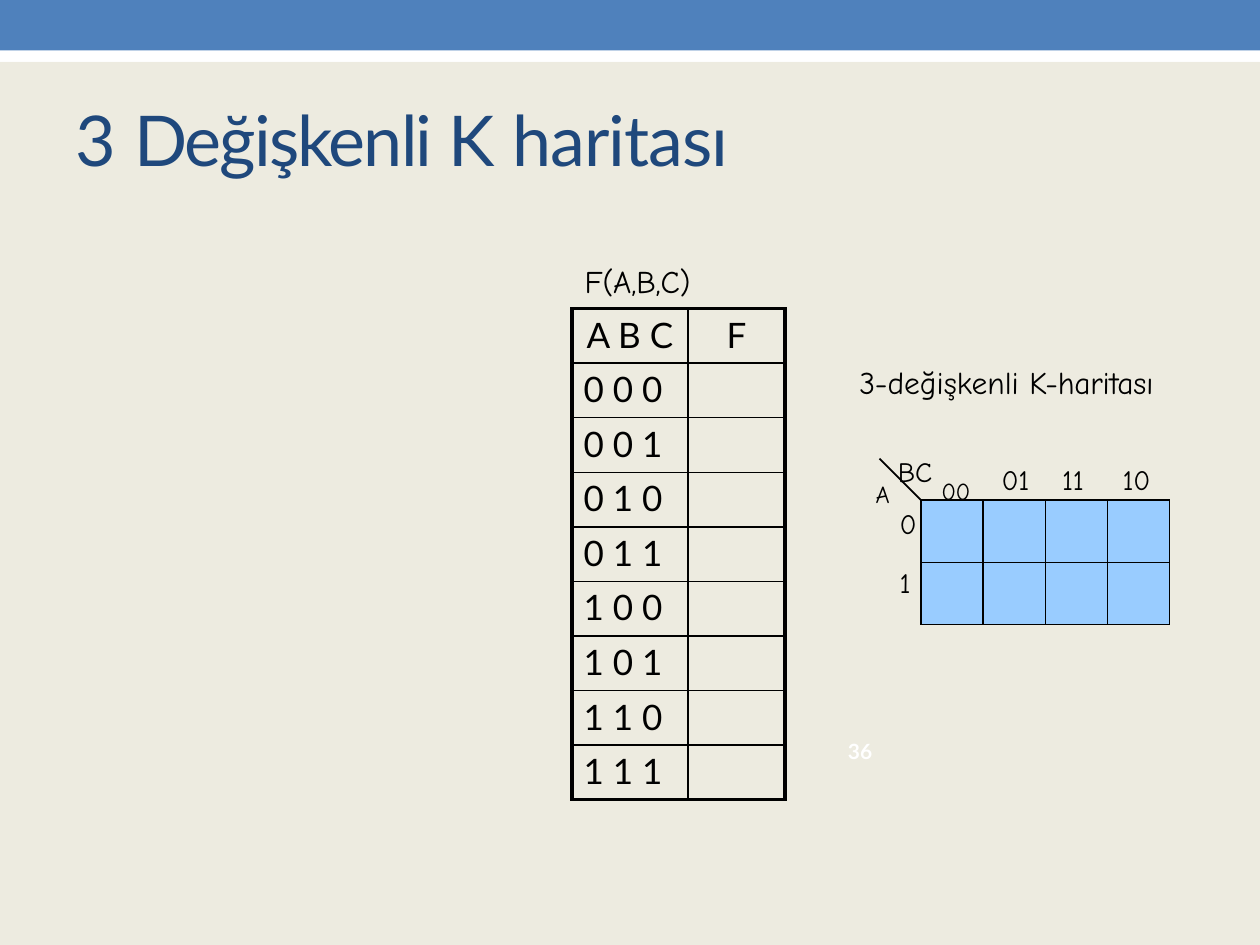
from lxml import etree
from pptx import Presentation
from pptx.dml.color import RGBColor
from pptx.enum.shapes import MSO_CONNECTOR, MSO_SHAPE
from pptx.enum.text import PP_ALIGN
from pptx.oxml.ns import qn
from pptx.util import Inches, Pt

STRAIGHT = MSO_CONNECTOR.STRAIGHT
RECTANGLE = MSO_SHAPE.RECTANGLE
LEFT, CENTER = PP_ALIGN.LEFT, PP_ALIGN.CENTER

# The slide is a grid of 100 columns by 75 rows.
COLUMNS, ROWS = 100, 75
UNIT = Inches(0.1)

BODY_FONT, HAND_FONT = "Lato", "Comic Neue"
BLACK, WHITE, CREAM, BLUE, NAVY, SKY = (
    "000000", "FFFFFF", "EDEBE0", "4F81BC", "1F487C", "99CCFF")

KMAP_LEFT, KMAP_TOP, KMAP_CELL = 73.1, 39.7, 4.93
THIN, THICK = 1, 2.25


def grid(*counts):
    return [round(count * UNIT) for count in counts]


def color(code):
    return RGBColor.from_string(code)


def add_band(slide, top, height, fill):
    band = slide.shapes.add_shape(RECTANGLE, *grid(0, top, COLUMNS, height))
    band.shadow.inherit = False
    band.fill.solid()
    band.fill.fore_color.rgb = color(fill)
    band.line.fill.background()


def write(paragraph, runs, size, font, ink=BLACK, align=LEFT, before=1):
    """Fill a paragraph from (text, run attributes) pairs."""
    paragraph.alignment = align
    paragraph.space_before = Pt(before)
    paragraph.font.name = font
    paragraph.font.size = Pt(size)
    paragraph.font.color.rgb = color(ink)
    for text, attributes in runs:
        run = paragraph.add_run()
        run.text = text
        properties = run.font._element
        for name, value in attributes.items():
            properties.set(name, str(value))


def add_text(slide, place, runs, size, font=HAND_FONT, **style):
    frame = slide.shapes.add_textbox(*grid(*place)).text_frame
    frame.word_wrap = True
    frame.margin_left = Inches(0.01)
    frame.margin_right = frame.margin_bottom = 0
    frame.margin_top = Inches(0.01)
    write(frame.paragraphs[0], runs, size, font, **style)
    return frame


def set_borders(cell, **widths):
    properties = cell._tc.get_or_add_tcPr()
    for side in "LRTB":
        line = etree.SubElement(properties, qn(f"a:ln{side}"),
                                w=str(Pt(widths.get(side, THIN))))
        fill = etree.SubElement(line, qn("a:solidFill"))
        etree.SubElement(fill, qn("a:srgbClr"), val=BLACK)


def add_grid_table(slide, left, top, widths, row_height, row_count, fill, outline):
    """Add a table with thin inner lines and an outline of the given width."""
    place = grid(left, top, sum(widths), row_height * row_count)
    table = slide.shapes.add_table(row_count, len(widths), *place).table
    table.first_row = table.horz_banding = False
    for column, width in zip(table.columns, grid(*widths)):
        column.width = width
    last_row, last_column = row_count - 1, len(widths) - 1
    for r in range(row_count):
        for c in range(len(widths)):
            cell = table.cell(r, c)
            edges = {"L": c == 0, "R": c == last_column,
                     "T": r == 0, "B": r == last_row}
            set_borders(cell, **{side: outline for side, outer in edges.items() if outer})
            cell.fill.solid()
            cell.fill.fore_color.rgb = color(fill)
    return table


def write_cell(cell, text, right=0):
    cell.margin_left = cell.margin_bottom = 0
    cell.margin_right = Inches(right)
    cell.margin_top = Inches(0.04)
    write(cell.text_frame.paragraphs[0], [(text, {})], 20, BODY_FONT,
          align=CENTER, before=3)


def add_truth_table(slide):
    add_text(slide, (46.3, 20.7, 14, 3.2), [("F(A,B,C)", {"spc": -10})], 18)
    table = add_grid_table(slide, 45.4, 24.5, (9.2, 7.7), 4.33, 9, CREAM, THICK)
    write_cell(table.cell(0, 0), "A B C")
    write_cell(table.cell(0, 1), "F")
    for number in range(8):
        write_cell(table.cell(number + 1, 0), " ".join(f"{number:03b}"), right=0.11)


def add_karnaugh_map(slide):
    add_text(slide, (68.1, 28.7, 26.5, 3.2),
             [("3-", {"spc": -20}), ("değişkenli ", {}), ("K-haritası", {"spc": -15})], 18)
    add_grid_table(slide, KMAP_LEFT, KMAP_TOP, [KMAP_CELL] * 4, KMAP_CELL, 2, SKY, THIN)

    corner = [("A ", {"sz": 2400, "baseline": -49000}),
              ("BC ", {"sz": 1600, "spc": -10}),
              ("00", {"sz": 2400, "spc": -40, "baseline": -42000})]
    add_text(slide, (69.4, 34.9, 8.8, 3), corner, 16)
    for index, code in enumerate(("01", "11", "10")):
        add_text(slide, (79.4 + 4.8 * index, 36.6, 2.8, 3), [(code, {"spc": -20})], 16)

    row_labels = add_text(slide, (71.3, 40.1, 1.6, 7.6), [("0", {})], 16)
    write(row_labels.add_paragraph(), [("1", {})], 16, HAND_FONT, before=14.4)

    diagonal = slide.shapes.add_connector(
        STRAIGHT, *grid(KMAP_LEFT, KMAP_TOP, KMAP_LEFT - 3.3, KMAP_TOP - 3.3))
    diagonal.line.color.rgb = color(BLACK)
    diagonal.line.width = Pt(THIN)
    etree.SubElement(diagonal._element.spPr, qn("a:effectLst"))


def main():
    deck = Presentation()
    deck.slide_width, deck.slide_height = grid(COLUMNS, ROWS)
    slide = deck.slides.add_slide(deck.slide_layouts[6])

    add_band(slide, 4.9, ROWS - 4.9, CREAM)
    add_band(slide, 4, 0.9, WHITE)
    add_band(slide, 0, 4, BLUE)

    title = [("3 ", {}), ("Değişkenli ", {"spc": -110}), ("K ", {}),
             ("haritası", {"spc": -60})]
    add_text(slide, (5.9, 7.6, 60, 7), title, 40, BODY_FONT, ink=NAVY)
    add_truth_table(slide)
    add_karnaugh_map(slide)
    add_text(slide, (67.2, 58.5, 4, 2.2), [("36", {"b": 1})], 12, BODY_FONT, ink=WHITE)

    deck.save("out.pptx")


if __name__ == "__main__":
    main()
